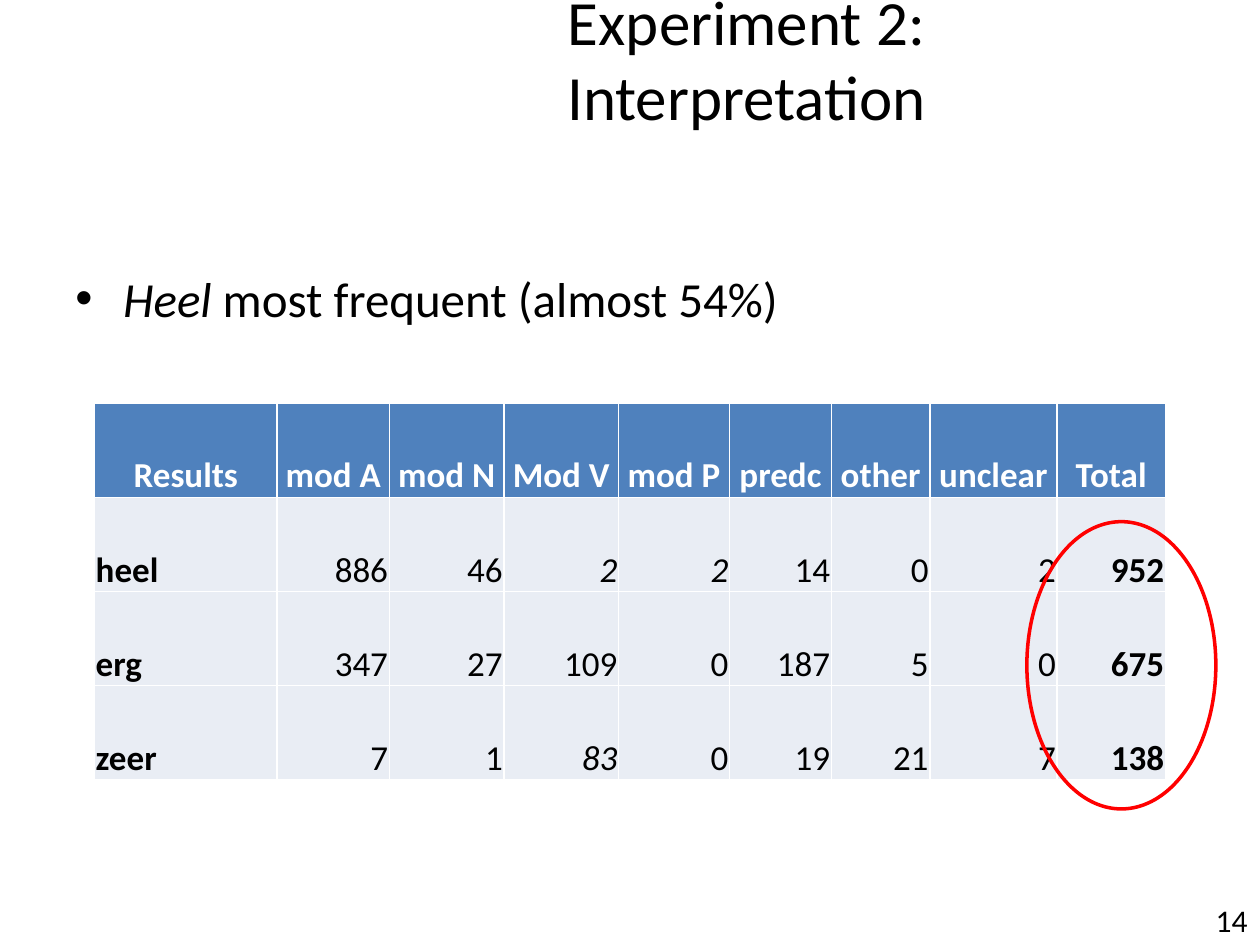
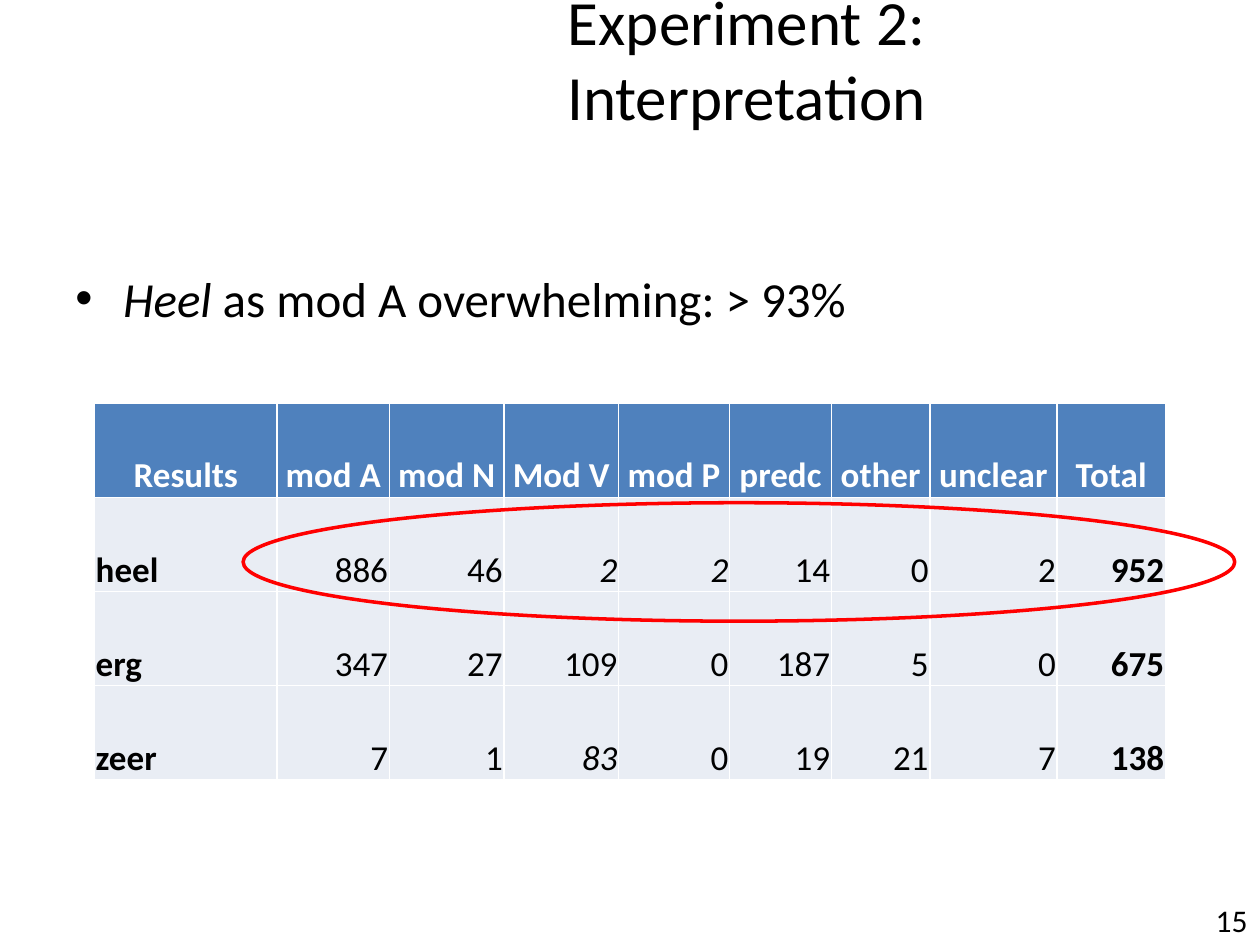
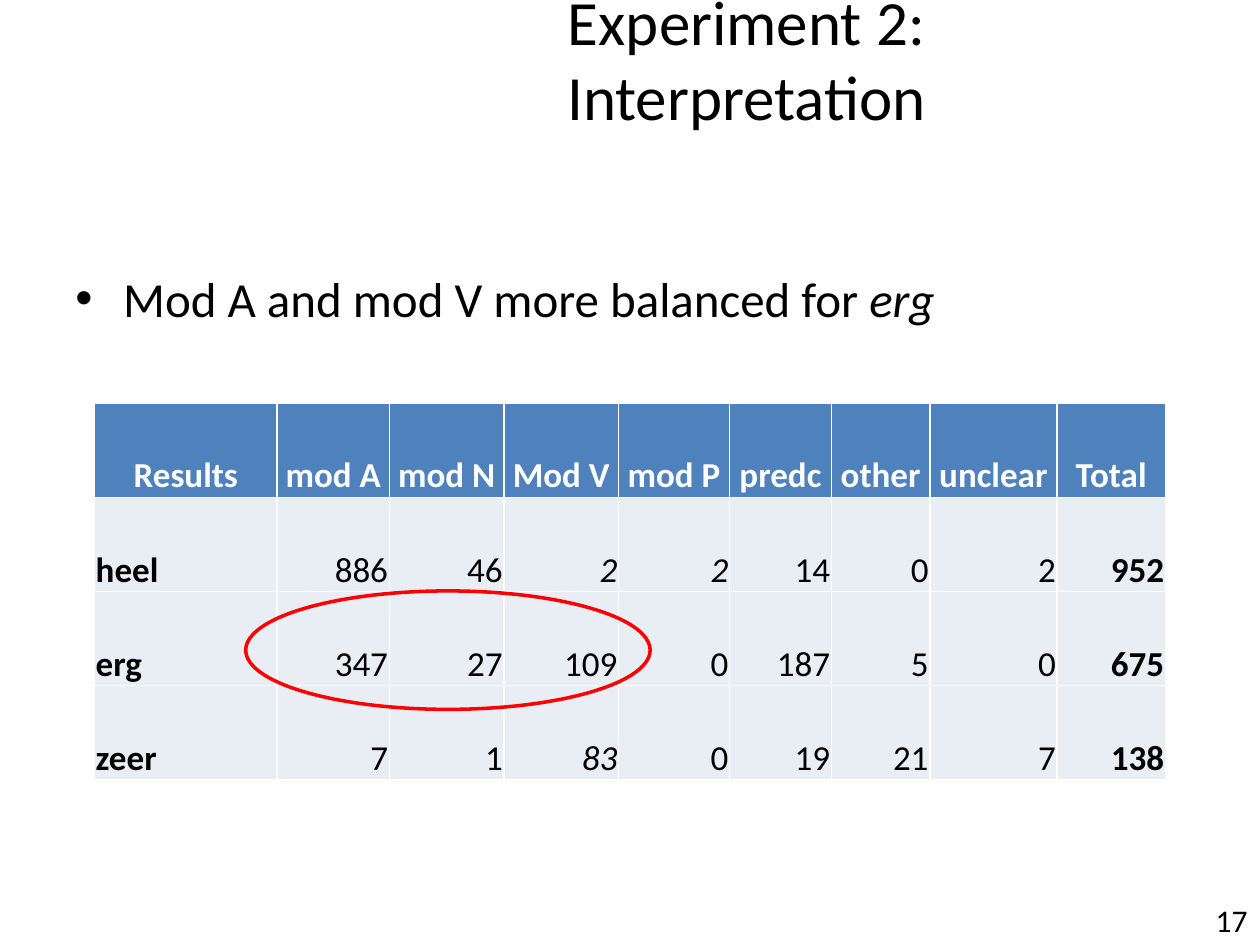
from typing import NamedTuple

from lxml.etree import SubElement
from pptx import Presentation
from pptx.dml.color import RGBColor
from pptx.enum.shapes import MSO_SHAPE
from pptx.enum.text import MSO_ANCHOR, PP_ALIGN
from pptx.oxml.ns import qn
from pptx.util import Emu, Inches, Pt

SLIDE_WIDTH, SLIDE_HEIGHT = Inches(10), Inches(7.5)
COLUMN, ROW = SLIDE_WIDTH // 100, SLIDE_HEIGHT // 75

FONT = "Calibri"
BLACK, WHITE, RED = "000000", "FFFFFF", "FF0000"
HEADER_BLUE, BODY_BLUE = "4F81BD", "E9EDF4"


class Area(NamedTuple):
    """A rectangle in grid columns and rows."""
    left: float
    top: float
    width: float
    height: float

    def lengths(self) -> tuple[Emu, Emu, Emu, Emu]:
        return (Emu(round(self.left * COLUMN)), Emu(round(self.top * ROW)),
                Emu(round(self.width * COLUMN)), Emu(round(self.height * ROW)))


class Span(NamedTuple):
    text: str
    italic: bool = False
    bold: bool = False


class Finding(NamedTuple):
    number: int
    statement: list[Span]
    highlight: Area


TITLE_LINES = ["Experiment 2:", "Interpretation"]
TITLE_AREA = Area(18.5, 0, 81.5, 9.2)
STATEMENT_AREA = Area(5, 20.8, 90, 46.2)
NUMBER_AREA = Area(89.4, 71, 10.6, 4)
RESULTS_AREA = Area(7.5, 32, 85, 29.9)
RESULTS_COLUMNS = [14.5, 8.9, 9.1, 9.1, 8.8, 8.1, 7.8, 10.1, 8.6]
BULLET_INDENT = Inches(0.38)

RESULTS = [
    ["Results", "mod A", "mod N", "Mod V", "mod P", "predc", "other", "unclear", "Total"],
    ["heel", "886", "46", "2", "2", "14", "0", "2", "952"],
    ["erg", "347", "27", "109", "0", "187", "5", "0", "675"],
    ["zeer", "7", "1", "83", "0", "19", "21", "7", "138"],
]
ITALIC_COUNTS = {("heel", "Mod V"), ("heel", "mod P"), ("zeer", "Mod V")}

FINDINGS = [
    Finding(14, [Span("Heel ", italic=True), Span("most frequent (almost 54%)")],
            Area(81.5, 41.4, 15, 22.8)),
    Finding(15, [Span("Heel", italic=True), Span(" as mod A overwhelming: > 93%")],
            Area(19.3, 39.9, 78.7, 9.4)),
    Finding(17, [Span("Mod A and mod V more balanced for "), Span("erg", italic=True)],
            Area(19.5, 46.9, 32.1, 9.4)),
]


def color(value: str) -> RGBColor:
    return RGBColor.from_string(value)


def add_span(paragraph, span: Span, size: float, ink: str = BLACK) -> None:
    run = paragraph.add_run()
    run.text = span.text
    font = run.font
    font.name, font.size = FONT, Pt(size)
    font.bold, font.italic = span.bold, span.italic
    font.color.rgb = color(ink)


def add_text_area(slide, area: Area, align: PP_ALIGN, anchor: MSO_ANCHOR = MSO_ANCHOR.TOP):
    """Add a wrapping text box and return its first paragraph."""
    frame = slide.shapes.add_textbox(*area.lengths()).text_frame
    frame.word_wrap = True
    frame.vertical_anchor = anchor
    paragraph = frame.paragraphs[0]
    paragraph.alignment = align
    return paragraph


def add_title(slide) -> None:
    paragraph = add_text_area(slide, TITLE_AREA, PP_ALIGN.CENTER, MSO_ANCHOR.MIDDLE)
    for index, line in enumerate(TITLE_LINES):
        if index:
            paragraph.add_line_break()
        add_span(paragraph, Span(line), 36)


def add_statement(slide, spans: list[Span]) -> None:
    paragraph = add_text_area(slide, STATEMENT_AREA, PP_ALIGN.LEFT)
    properties = paragraph._p.get_or_add_pPr()
    properties.set("marL", str(BULLET_INDENT))
    properties.set("indent", str(-BULLET_INDENT))
    SubElement(properties, qn("a:buFont"), typeface="Arial")
    SubElement(properties, qn("a:buChar"), char="•")
    for span in spans:
        add_span(paragraph, span, 28)


def add_number(slide, number: int) -> None:
    paragraph = add_text_area(slide, NUMBER_AREA, PP_ALIGN.RIGHT)
    add_span(paragraph, Span(str(number)), 18)


def style_cell(cell, fill: str) -> None:
    cell.margin_left = cell.margin_right = cell.margin_top = Inches(0.01)
    cell.margin_bottom = 0
    cell.vertical_anchor = MSO_ANCHOR.BOTTOM
    properties = cell._tc.get_or_add_tcPr()
    for side in ("lnL", "lnR", "lnT", "lnB"):
        border = SubElement(properties, qn(f"a:{side}"), w=str(Pt(1)))
        SubElement(SubElement(border, qn("a:solidFill")), qn("a:srgbClr"), val=WHITE)
    cell.fill.solid()
    cell.fill.fore_color.rgb = color(fill)


def add_results(slide) -> None:
    headings = RESULTS[0]
    table = slide.shapes.add_table(len(RESULTS), len(headings), *RESULTS_AREA.lengths()).table
    table.horz_banding = False
    for column, width in zip(table.columns, RESULTS_COLUMNS):
        column.width = Emu(round(width * COLUMN))

    for r, counts in enumerate(RESULTS):
        for c, (heading, text) in enumerate(zip(headings, counts)):
            is_header = r == 0
            cell = table.cell(r, c)
            style_cell(cell, HEADER_BLUE if is_header else BODY_BLUE)
            paragraph = cell.text_frame.paragraphs[0]
            if is_header:
                paragraph.alignment = PP_ALIGN.CENTER
            else:
                paragraph.alignment = PP_ALIGN.RIGHT if c else PP_ALIGN.LEFT
            span = Span(text, italic=(counts[0], heading) in ITALIC_COUNTS,
                        bold=is_header or heading in ("Results", "Total"))
            add_span(paragraph, span, 20, WHITE if is_header else BLACK)


def add_highlight(slide, area: Area) -> None:
    ring = slide.shapes.add_shape(MSO_SHAPE.OVAL, *area.lengths())
    ring.shadow.inherit = False
    ring.fill.background()
    ring.line.color.rgb = color(RED)
    ring.line.width = Pt(2)


def main() -> None:
    deck = Presentation()
    deck.slide_width, deck.slide_height = SLIDE_WIDTH, SLIDE_HEIGHT
    blank = deck.slide_layouts[6]
    for finding in FINDINGS:
        slide = deck.slides.add_slide(blank)
        add_statement(slide, finding.statement)
        add_title(slide)
        add_number(slide, finding.number)
        add_results(slide)
        add_highlight(slide, finding.highlight)
    deck.save("out.pptx")


if __name__ == "__main__":
    main()
